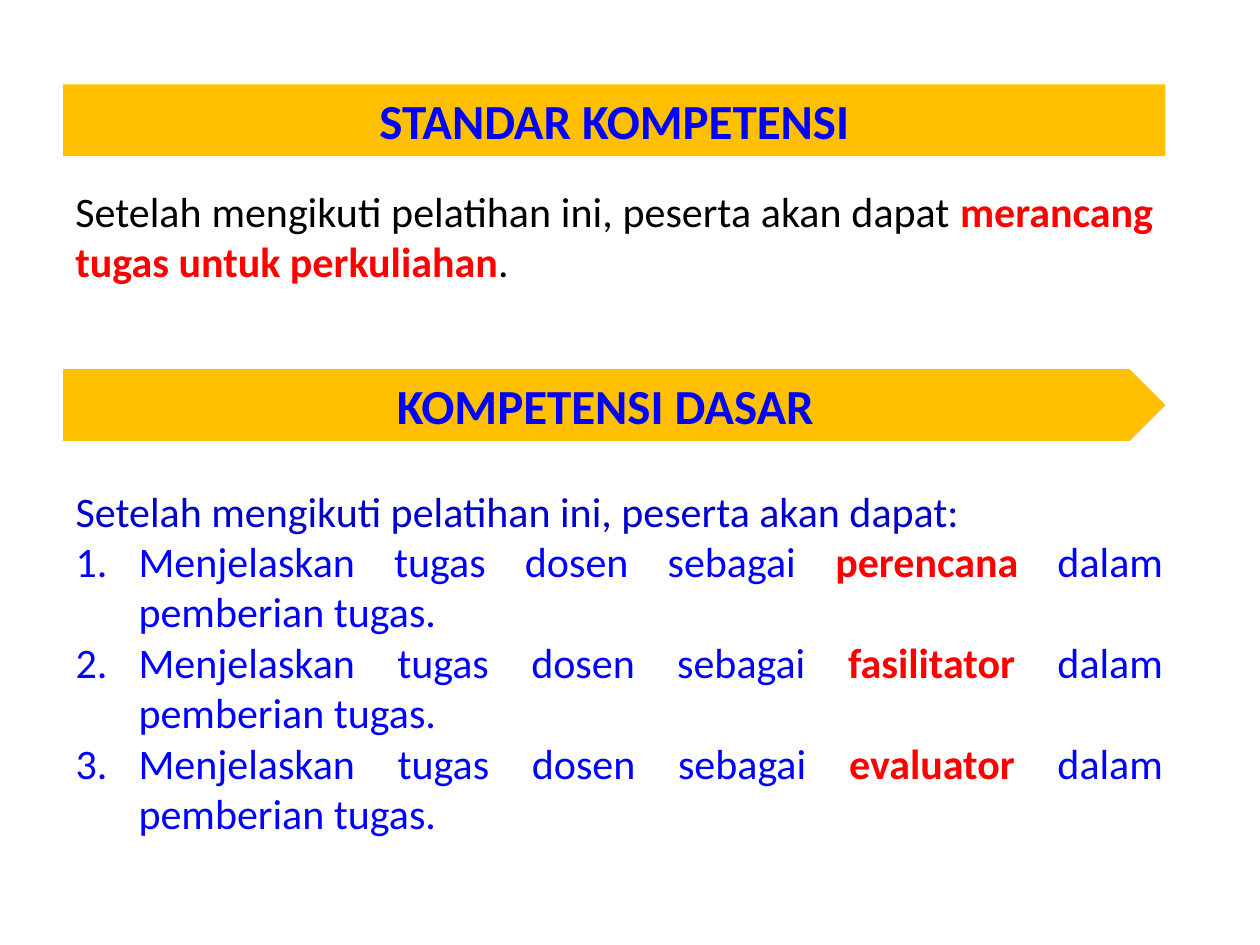
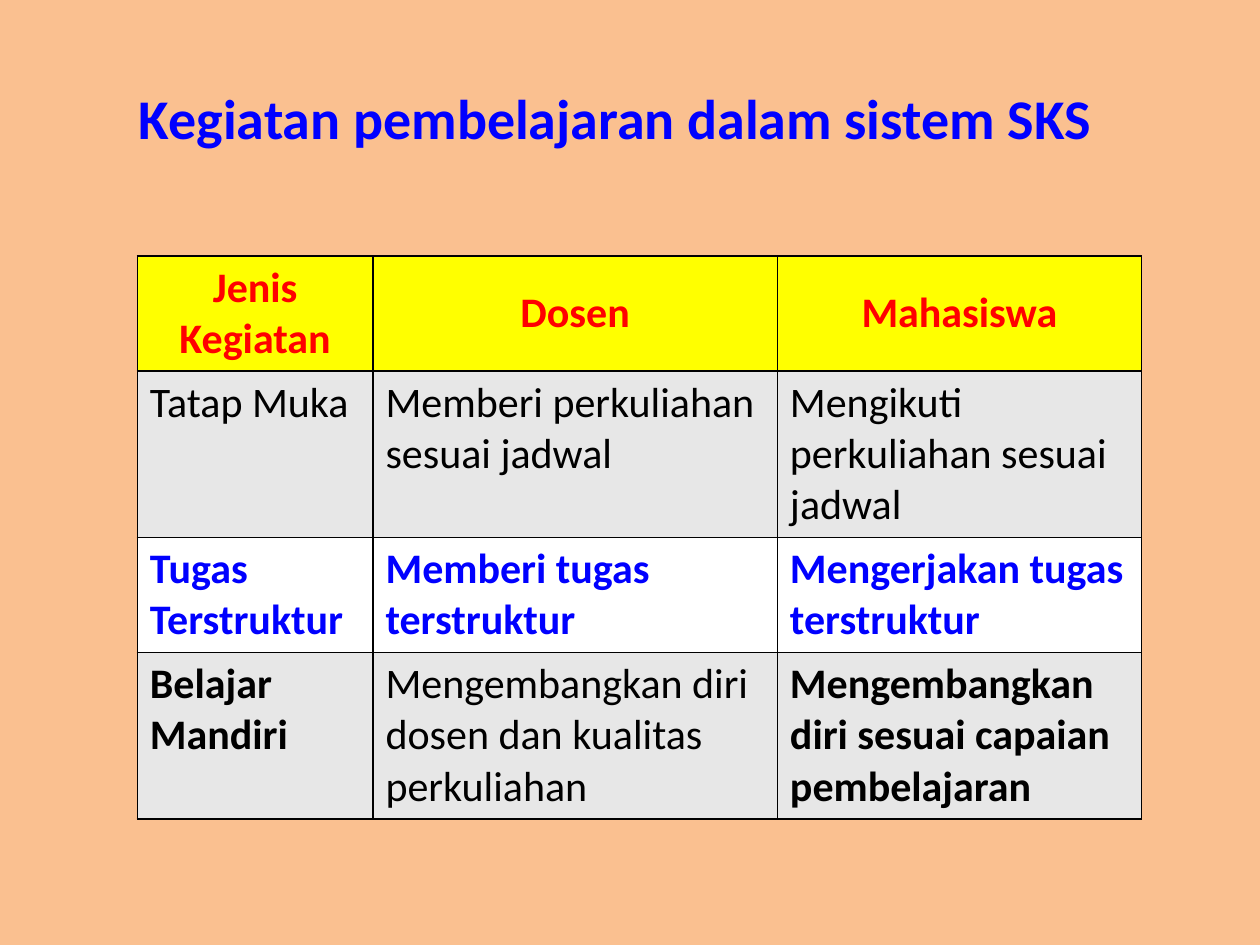
from lxml import etree
from pptx import Presentation
from pptx.dml.color import RGBColor
from pptx.enum import shapes, text
from pptx.oxml.ns import qn
from pptx.util import Inches, Pt

FONT = "Calibri"
BLUE, NAVY, RED, BLACK, WHITE = "0000FF", "0000CC", "FF0000", "000000", "FFFFFF"
GOLD, YELLOW, GREY, PEACH = "FFC000", "FFFF00", "E7E7E7", "FAC090"
BODY_SIZE, BANNER_SIZE, TITLE_SIZE = 24, 28, 32
ALIGN = text.PP_ALIGN

# Runs are (text, colour, bold).
STANDARD_BANNER = "STANDAR KOMPETENSI"
STANDARD = [
    ("Setelah mengikuti pelatihan ini, peserta akan dapat ", BLACK, False),
    ("merancang tugas untuk perkuliahan", RED, True),
    (".", BLACK, False),
]
BASIC_BANNER = "KOMPETENSI DASAR"
BASIC_INTRO = "Setelah mengikuti pelatihan ini, peserta akan dapat:"
LECTURER_ROLES = ["perencana", "fasilitator", "evaluator"]

ACTIVITY_TITLE = "Kegiatan pembelajaran dalam sistem SKS"
HEADINGS = ["Jenis Kegiatan", "Dosen", "Mahasiswa"]
# Rows are (height, fill, text colour, bold flag of each cell, cell texts).
ACTIVITY_ROWS = [
    (0.9, YELLOW, RED, (True, True, True), HEADINGS),
    (1.3, GREY, BLACK, (False, False, False),
     ["Tatap Muka", "Memberi perkuliahan sesuai jadwal",
      "Mengikuti perkuliahan sesuai jadwal"]),
    (0.9, WHITE, BLUE, (True, True, True),
     ["Tugas Terstruktur", "Memberi tugas terstruktur",
      "Mengerjakan tugas terstruktur"]),
    (1.3, GREY, BLACK, (True, False, True),
     ["Belajar Mandiri", "Mengembangkan diri dosen dan kualitas perkuliahan",
      "Mengembangkan diri sesuai capaian pembelajaran"]),
]
COLUMN_WIDTHS = [1.87, 3.21, 2.89]


def rgb(colour):
    return RGBColor.from_string(colour)


def fill_solid(target, colour):
    target.fill.solid()
    target.fill.fore_color.rgb = rgb(colour)


def write_runs(paragraph, runs, size=BODY_SIZE, align=ALIGN.LEFT):
    paragraph.alignment = align
    for words, colour, bold in runs:
        run = paragraph.add_run()
        run.text = words
        run.font.name = FONT
        run.font.size = Pt(size)
        run.font.bold = bold
        run.font.color.rgb = rgb(colour)


def place(shape, left, top, width, height):
    shape.left, shape.top = Inches(left), Inches(top)
    shape.width, shape.height = Inches(width), Inches(height)


def prepare_frame(shape, anchor=text.MSO_ANCHOR.TOP):
    frame = shape.text_frame
    frame.word_wrap = True
    frame.auto_size = text.MSO_AUTO_SIZE.NONE
    frame.vertical_anchor = anchor
    return frame


def style_banner(shape, top, words):
    place(shape, 0.5, top, 8.75, 0.57)
    fill_solid(shape, GOLD)
    shape.line.fill.background()
    frame = prepare_frame(shape, text.MSO_ANCHOR.MIDDLE)
    write_runs(frame.paragraphs[0], [(words, BLUE, True)], BANNER_SIZE, ALIGN.CENTER)


def shape_as_pentagon(placeholder):
    """Give a placeholder the arrow outline that add_shape gives the other banner."""
    properties = placeholder.element.spPr
    geometry = etree.SubElement(properties, qn("a:prstGeom"), prst="homePlate")
    etree.SubElement(geometry, qn("a:avLst"))


def set_bullet(paragraph, indent, tag, **attributes):
    properties = paragraph._p.get_or_add_pPr()
    properties.set("marL", str(Inches(indent)))
    properties.set("indent", str(-Inches(indent)))
    etree.SubElement(properties, qn(tag), **attributes)


def add_competency_slide(presentation):
    slide = presentation.slides.add_slide(presentation.slide_layouts[1])
    title, body = slide.shapes.title, slide.placeholders[1]
    shape_as_pentagon(title)
    style_banner(title, 0.67, STANDARD_BANNER)

    standard = slide.shapes.add_textbox(0, 0, 0, 0)
    place(standard, 0.5, 1.42, 8.75, 0.91)
    write_runs(prepare_frame(standard).paragraphs[0], STANDARD, align=ALIGN.JUSTIFY)

    banner = slide.shapes.add_shape(shapes.MSO_SHAPE.PENTAGON, 0, 0, 0, 0)
    banner.shadow.inherit = False
    style_banner(banner, 2.93, BASIC_BANNER)

    place(body, 0.5, 3.8, 8.83, 2.93)
    frame = prepare_frame(body)
    intro = frame.paragraphs[0]
    intro.space_before = Pt(0)
    set_bullet(intro, 0, "a:buNone")
    write_runs(intro, [(BASIC_INTRO, NAVY, False)])
    for role in LECTURER_ROLES:
        item = frame.add_paragraph()
        item.space_before = Pt(0)
        set_bullet(item, 0.5, "a:buAutoNum", type="arabicPeriod")
        write_runs(item, [
            ("Menjelaskan tugas dosen sebagai ", BLUE, False),
            (role, RED, True),
            (" dalam pemberian tugas.", BLUE, False),
        ], align=ALIGN.JUSTIFY)


def add_borders(cell):
    properties = cell._tc.get_or_add_tcPr()
    for side in ("lnL", "lnR", "lnT", "lnB"):
        line = etree.SubElement(properties, qn(f"a:{side}"), w=str(Pt(1)))
        fill = etree.SubElement(line, qn("a:solidFill"))
        etree.SubElement(fill, qn("a:srgbClr"), val=BLACK)


def add_activity_slide(presentation):
    slide = presentation.slides.add_slide(presentation.slide_layouts[5])
    fill_solid(slide.background, PEACH)
    title = slide.shapes.title
    place(title, 0.94, 0.61, 7.89, 0.64)
    write_runs(prepare_frame(title).paragraphs[0],
               [(ACTIVITY_TITLE, BLUE, True)], TITLE_SIZE, ALIGN.CENTER)

    heights = [row[0] for row in ACTIVITY_ROWS]
    table = slide.shapes.add_table(
        len(heights), len(COLUMN_WIDTHS), Inches(1.09), Inches(2.03),
        Inches(sum(COLUMN_WIDTHS)), Inches(sum(heights))).table
    for column, width in zip(table.columns, COLUMN_WIDTHS):
        column.width = Inches(width)
    for row, (height, fill, colour, bolds, texts) in zip(table.rows, ACTIVITY_ROWS):
        row.height = Inches(height)
        is_heading = texts is HEADINGS
        for cell, bold, words in zip(row.cells, bolds, texts):
            add_borders(cell)
            fill_solid(cell, fill)
            cell.vertical_anchor = (text.MSO_ANCHOR.MIDDLE if is_heading
                                    else text.MSO_ANCHOR.TOP)
            write_runs(cell.text_frame.paragraphs[0], [(words, colour, bold)],
                       align=ALIGN.CENTER if is_heading else ALIGN.LEFT)


def main():
    presentation = Presentation()
    presentation.slide_width, presentation.slide_height = Inches(10), Inches(7.5)
    add_competency_slide(presentation)
    add_activity_slide(presentation)
    presentation.save("out.pptx")


if __name__ == "__main__":
    main()
